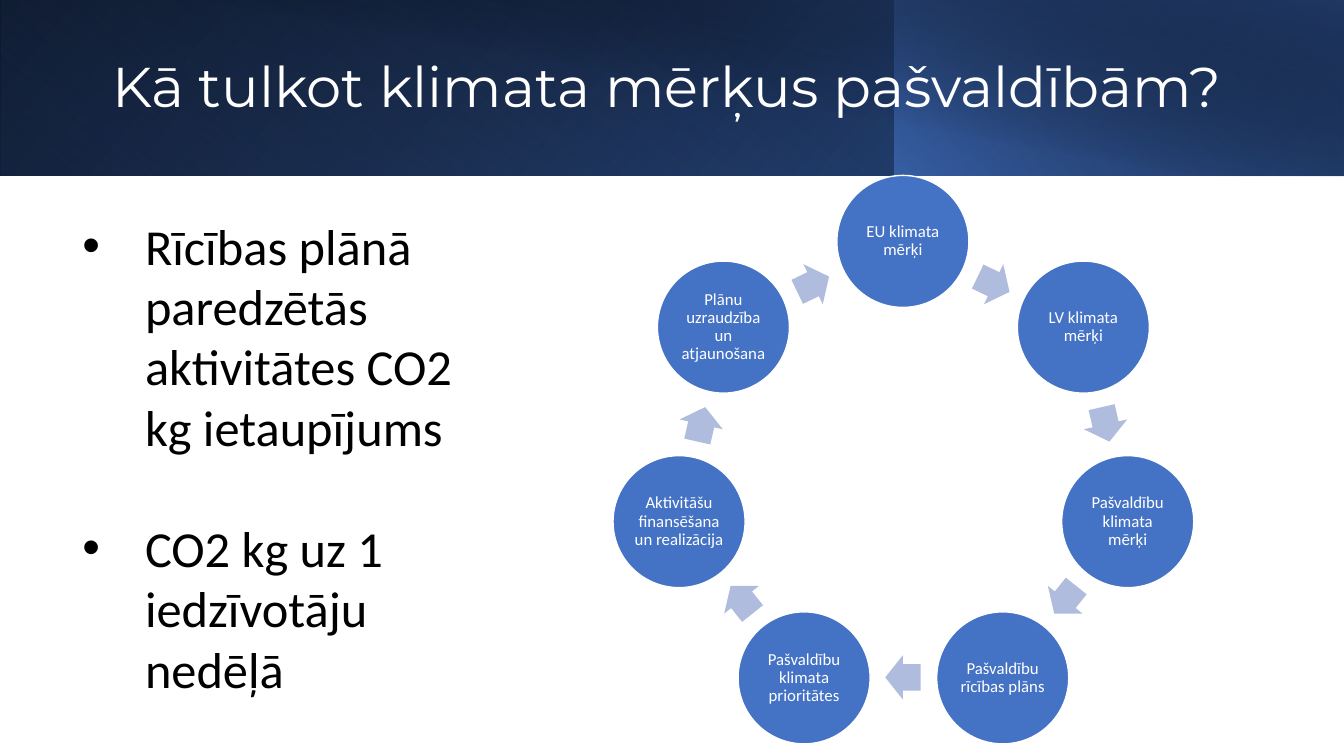
"""Builds a slide on climate goals for municipalities."""
from math import cos, pi, radians, sin

from lxml import etree
from pptx import Presentation
from pptx.dml.color import RGBColor
from pptx.enum.shapes import MSO_SHAPE
from pptx.enum.text import MSO_ANCHOR, MSO_AUTO_SIZE, PP_ALIGN
from pptx.oxml.ns import qn
from pptx.util import Pt

PX = 9144
RECT, OVAL, ARROW = MSO_SHAPE.RECTANGLE, MSO_SHAPE.OVAL, MSO_SHAPE.RIGHT_ARROW
CENTER, MIDDLE = PP_ALIGN.CENTER, MSO_ANCHOR.MIDDLE
FIT, FIXED = MSO_AUTO_SIZE.SHAPE_TO_FIT_TEXT, MSO_AUTO_SIZE.NONE
TITLE = "Kā tulkot klimata mērķus pašvaldībām?"
POINTS = [
    "Rīcības plānā paredzētās aktivitātes CO2 kg ietaupījums",
    "CO2 kg uz 1 iedzīvotāju nedēļā",
]
STEPS = [
    "EU klimata mērķi",
    "LV klimata mērķi",
    "Pašvaldību klimata mērķi",
    "Pašvaldību rīcības plāns",
    "Pašvaldību klimata prioritātes",
    "Aktivitāšu finansēšana un realizācija",
    "Plānu uzraudzība un atjaunošana",
]
MID_X, MID_Y, RADIUS = 896, 467, 228
DISC, HEAD_W, HEAD_H = 131, 35, 44


def px(n):
    """Turn pixels into EMU."""
    return round(n) * PX


def color(code):
    """Turn a hex string into a colour."""
    return RGBColor.from_string(code)


def style(para, size, face, code):
    """Set the font of every run in a paragraph."""
    for run in para.runs:
        run.font.size = Pt(size)
        run.font.name = face
        run.font.color.rgb = color(code)


def shape(slide, kind, x, y, w, h):
    """Add a preset shape with no shadow and no line."""
    item = slide.shapes.add_shape(kind, px(x), px(y), px(w), px(h))
    item.shadow.inherit = False
    item.line.fill.background()
    return item


def band(slide, x, w, h, stops, angle, flip=True, turn=0):
    """Add a gradient band at the top of the slide."""
    item = shape(slide, RECT, x, 0, w, h)
    item.rotation = turn
    item.fill.gradient()
    item.fill.gradient_angle = 360 - angle
    for stop, (place, code, alpha) in zip(item.fill.gradient_stops, stops):
        stop.position = place / 100
        stop.color.rgb = color(code)
    props = item.element.spPr
    for node, (place, code, alpha) in zip(props.iter(qn("a:srgbClr")), stops):
        if alpha < 100:
            etree.SubElement(node, qn("a:alpha")).set("val", str(alpha * 1000))
    if flip:
        props.find(qn("a:xfrm")).set("flipH", "1")


def header(slide):
    """Lay the bands and set the title over them."""
    band(slide, 0, 1333, 174, [(0, "000000", 100), (100, "2F5597", 100)], 140)
    band(slide, 0, 888, 174, [(20, "4472C4", 0), (100, "203864", 55)], 230,
         turn=180)
    band(slide, 887, 446, 174, [(0, "4472C4", 66), (100, "000000", 30)], 220)
    band(slide, 50, 1283, 175, [(50, "000000", 0), (99, "203864", 52)], 280,
         flip=False)
    title = slide.shapes.title
    slide.shapes.element.append(title.element)
    title.left, title.top = px(90), px(32)
    title.width, title.height = px(1142), px(113)
    frame = title.text_frame
    frame.text = TITLE
    frame.auto_size = FIXED
    frame.word_wrap = True
    frame.vertical_anchor = MIDDLE
    para = frame.paragraphs[0]
    para.alignment = CENTER
    para.line_spacing = 0.9
    style(para, 40, "Montserrat", "FFFFFF")


def bullets(slide):
    """Add the bulleted text on the left."""
    box = slide.shapes.add_textbox(px(72), px(208), px(443), px(555))
    frame = box.text_frame
    frame.word_wrap = True
    frame.auto_size = FIT
    frame.text = "\n".join(POINTS)
    for i, para in enumerate(frame.paragraphs):
        props = para._p.get_or_add_pPr()
        props.set("marL", str(px(62)))
        props.set("indent", str(px(-62)))
        etree.SubElement(props, qn("a:buFont")).set("typeface", "Arial")
        etree.SubElement(props, qn("a:buChar")).set("char", "•")
        if i:
            para.space_before = Pt(43)
        style(para, 36, "Calibri", "000000")


def disc(slide, x, y, text):
    """Add a labelled disc centred on a point."""
    item = shape(slide, OVAL, x - DISC / 2, y - DISC / 2, DISC, DISC)
    item.fill.solid()
    item.fill.fore_color.rgb = color("4472C4")
    item.line.color.rgb = color("FFFFFF")
    item.line.width = Pt(1)
    frame = item.text_frame
    frame.text = text
    frame.word_wrap = True
    frame.vertical_anchor = MIDDLE
    frame.margin_left = frame.margin_right = px(2)
    frame.margin_top = frame.margin_bottom = px(2)
    para = frame.paragraphs[0]
    para.alignment = CENTER
    para.line_spacing = 0.9
    style(para, 12, "Calibri", "FFFFFF")


def arrow(slide, x, y, turn):
    """Add a turned block arrow centred on a point."""
    item = shape(slide, ARROW, x - HEAD_W / 2, y - HEAD_H / 2, HEAD_W, HEAD_H)
    item.adjustments[0] = 0.6
    item.adjustments[1] = 0.5
    item.rotation = turn
    item.fill.solid()
    item.fill.fore_color.rgb = color("B0BCDE")


def spot(angle, reach):
    """Find the point at a clockwise angle from the top of the ring."""
    turn = radians(angle)
    return MID_X + reach * sin(turn), MID_Y - reach * cos(turn)


def ring(slide):
    """Place the discs on a circle with an arrow after each."""
    step = 360 / len(STEPS)
    inner = RADIUS * cos(pi / len(STEPS))
    for i, text in enumerate(STEPS):
        disc(slide, *spot(i * step, RADIUS), text)
        half = (i + 0.5) * step
        arrow(slide, *spot(half, inner), half)


def main():
    """Build and save the slide."""
    deck = Presentation()
    deck.slide_width, deck.slide_height = px(1333), px(750)
    slide = deck.slides.add_slide(deck.slide_layouts[5])
    header(slide)
    bullets(slide)
    ring(slide)
    deck.save("out.pptx")


if __name__ == "__main__":
    main()
